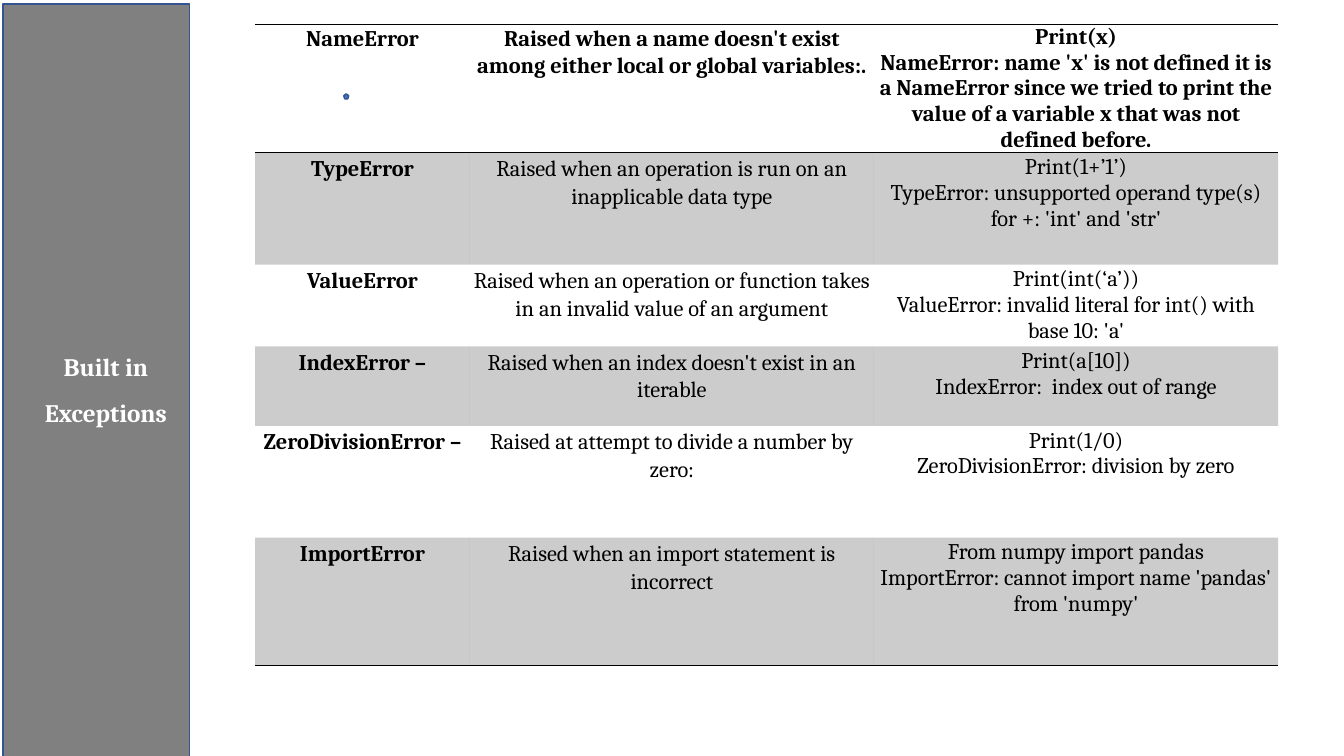
from lxml import etree
from pptx import Presentation
from pptx import util as u
from pptx.dml import color
from pptx.enum import shapes, text
from pptx.oxml import ns

FONT = "Cambria"
PLAIN = "{2D5ABB26-0587-4C30-8999-92F81FD0307C}"  # table style without grid
COLS = [153.4, 288.7, 288.7]
ROWS = [
    (86.4, "NameError",
     "Raised when a name doesn't exist among either local or global variables:.",
     "Print(x)",
     "NameError: name 'x' is not defined it is a NameError since we tried to "
     "print the value of a variable x that was not defined before."),
    (79.9, "TypeError",
     "Raised when an operation is run on an inapplicable data type",
     "Print(1+’1’)",
     "TypeError: unsupported operand type(s) for +: 'int' and 'str'"),
    (58.3, "ValueError",
     "Raised when an operation or function takes in an invalid value of an argument",
     "Print(int(‘a’))",
     "ValueError: invalid literal for int() with base 10: 'a'"),
    (56.9, "IndexError –",
     "Raised when an index doesn't exist in an iterable",
     "Print(a[10])",
     "IndexError:  index out of range"),
    (79.9, "ZeroDivisionError –",
     "Raised at attempt to divide a number by zero:",
     "Print(1/0)",
     "ZeroDivisionError: division by zero"),
    (91.4, "ImportError",
     "Raised when an import statement is incorrect",
     "From numpy import pandas",
     "ImportError: cannot import name 'pandas' from 'numpy'"),
]


def rgb(code):
    return color.RGBColor.from_string(code)


class Page:
    def __init__(self, slide):
        self.slide = slide
        self.ink = "000000"
        self.edge = "325491"

    def shape(self, kind, left, top, width, height, fill):
        box = self.slide.shapes.add_shape(
            kind, u.Pt(left), u.Pt(top), u.Pt(width), u.Pt(height))
        box.shadow.inherit = False
        box.fill.solid()
        box.fill.fore_color.rgb = rgb(fill)
        box.line.color.rgb = rgb(self.edge)
        box.line.width = u.Pt(1)
        return box

    def label(self, para, words, size, ink, bold):
        para.alignment = text.PP_ALIGN.CENTER
        run = para.add_run()
        run.text = words
        font = run.font
        font.name, font.size, font.bold = FONT, u.Pt(size), bold
        font.color.rgb = rgb(ink)

    def rule(self, cell, side):
        """Draw a thin line on one side of a cell: T or B."""
        line = etree.Element(ns.qn("a:ln" + side), w=str(u.Pt(1)))
        fill = etree.SubElement(line, ns.qn("a:solidFill"))
        etree.SubElement(fill, ns.qn("a:srgbClr"), val=self.ink)
        cell._tc.get_or_add_tcPr().insert(0, line)

    def shade(self, cell):
        """Tint a cell with the ink at 20 % opacity."""
        cell.fill.solid()
        cell.fill.fore_color.rgb = rgb(self.ink)
        tint = cell._tc.tcPr.find(".//" + ns.qn("a:srgbClr"))
        etree.SubElement(tint, ns.qn("a:alpha"), val="20000")

    def cell(self, cell, lines, row, col, last):
        cell.margin_left = cell.margin_right = u.Pt(2.2)
        cell.margin_top = cell.margin_bottom = u.Pt(1.4 if row else 0)
        if row % 2:
            self.shade(cell)
        else:
            cell.fill.background()
        if row in (0, last):
            self.rule(cell, "B")
        if row == 0:
            self.rule(cell, "T")
        frame = cell.text_frame
        for n, words in enumerate(lines):
            para = frame.add_paragraph() if n else frame.paragraphs[0]
            self.label(para, words, 16, self.ink, row == 0 or col == 0)
            if col < 2:
                para.line_spacing = 1.07
                para.space_after = u.Pt(8)

    def table(self, left, top, cols, rows):
        high = sum(row[0] for row in rows)
        frame = self.slide.shapes.add_table(
            len(rows), len(cols), u.Pt(left), u.Pt(top),
            u.Pt(sum(cols)), u.Pt(high))
        grid = frame.table
        grid.first_row = grid.horz_banding = False
        grid._tbl.tblPr.find(ns.qn("a:tableStyleId")).text = PLAIN
        for n, width in enumerate(cols):
            grid.columns[n].width = u.Pt(width)
        for r, (height, name, cause, *sample) in enumerate(rows):
            grid.rows[r].height = u.Pt(height)
            for c, lines in enumerate(([name], [cause], sample)):
                self.cell(grid.cell(r, c), lines, r, c, len(rows) - 1)


def main():
    deck = Presentation()
    deck.slide_width, deck.slide_height = u.Pt(960), u.Pt(540)
    page = Page(deck.slides.add_slide(deck.slide_layouts[6]))

    kind = shapes.MSO_SHAPE
    bar = page.shape(kind.RECTANGLE, 2.2, 2.9, 133.2, 540, "808080")
    bar.text_frame.word_wrap = True
    bar.text_frame.vertical_anchor = text.MSO_ANCHOR.MIDDLE
    title = bar.text_frame.paragraphs[0]
    page.label(title, "Built in Exceptions", 18, "FFFFFF", True)
    title.line_spacing = 1.5
    title.space_before = u.Pt(6)
    title._p.get_or_add_pPr().set("marL", str(u.Pt(13.7)))

    page.shape(kind.REGULAR_PENTAGON, 245.5, 67, 3.6, 3.6, "4472C4")
    page.table(182.2, 17.3, COLS, ROWS)
    deck.save("out.pptx")


if __name__ == "__main__":
    main()
